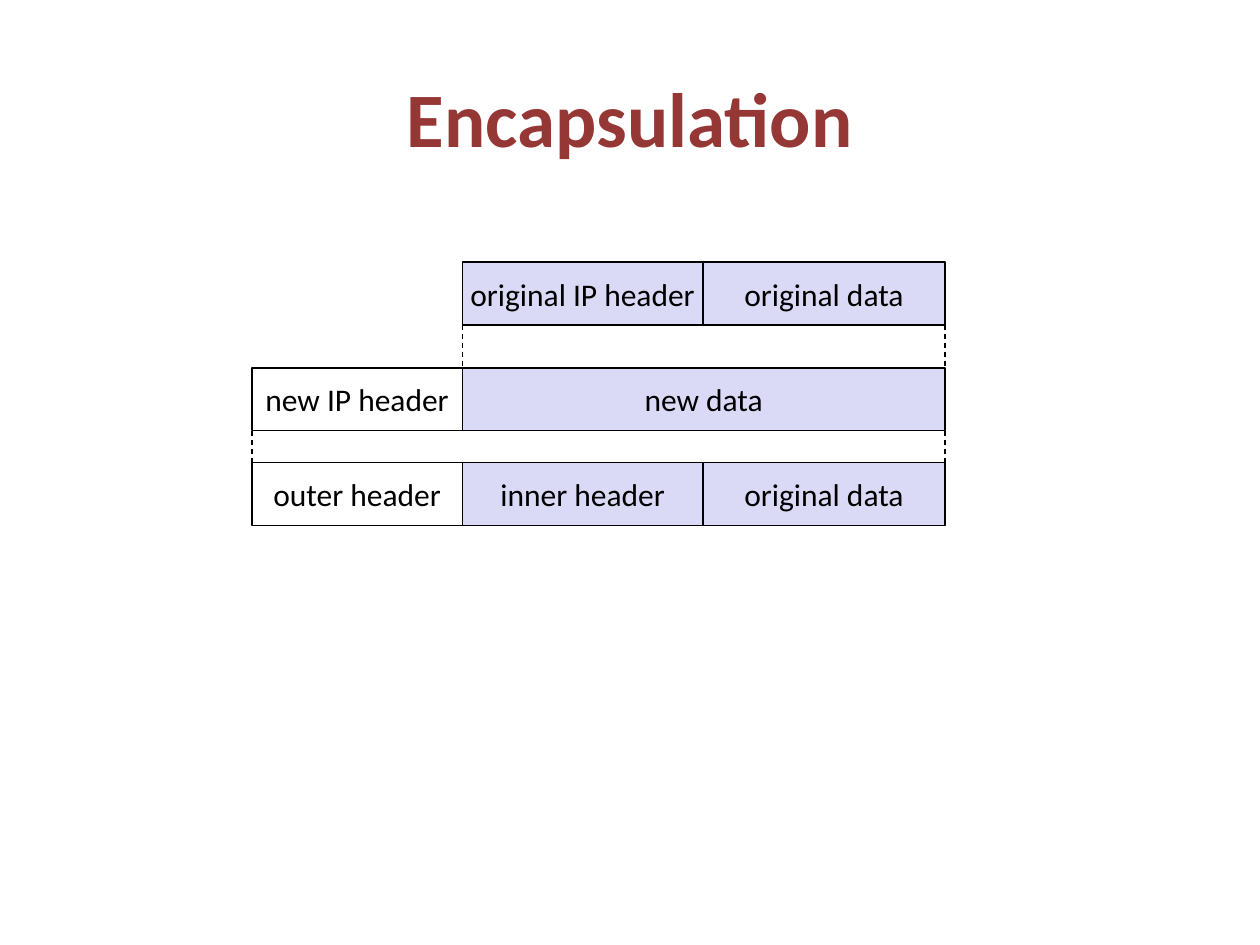
from typing import NamedTuple

from lxml import etree
from pptx import Presentation
from pptx.dml.color import RGBColor
from pptx.enum import dml, shapes, text
from pptx.oxml import ns
from pptx.util import Inches, Pt

FONT = "Calibri"
BLACK, WHITE, LILAC, DARK_RED = "000000", "FFFFFF", "DADAF6", "953735"

# Column edges shared by all packets, and the top of each packet row
OUTER, INNER, DATA, END = 2, 3.67, 5.58, 7.5
ORIGINAL_ROW, NEW_ROW, RESULT_ROW = 2.08, 2.92, 3.67
ROW_HEIGHT = 0.5
GUIDE_LENGTH = 0.33


class Field(NamedTuple):
    label: str
    left: float
    right: float
    top: float
    fill: str = LILAC


class Guide(NamedTuple):
    x: float
    row_top: float


FIELDS = [
    Field("original IP header", INNER, DATA, ORIGINAL_ROW),
    Field("original data", DATA, END, ORIGINAL_ROW),
    Field("new data", INNER, END, NEW_ROW),
    Field("new IP header", OUTER, INNER, NEW_ROW, WHITE),
    Field("outer header", OUTER, INNER, RESULT_ROW, WHITE),
    Field("inner header", INNER, DATA, RESULT_ROW),
    Field("original data", DATA, END, RESULT_ROW),
]

GUIDES = [
    Guide(INNER, ORIGINAL_ROW),
    Guide(END, ORIGINAL_ROW),
    Guide(OUTER, NEW_ROW),
    Guide(END, NEW_ROW),
]


def rgb(value: str) -> RGBColor:
    return RGBColor.from_string(value)


def style_text(frame, size: float, color: str, bold: bool = False) -> None:
    frame.vertical_anchor = text.MSO_ANCHOR.MIDDLE
    paragraph = frame.paragraphs[0]
    paragraph.alignment = text.PP_ALIGN.CENTER
    font = paragraph.font
    font.name, font.size, font.bold = FONT, Pt(size), bold
    font.color.rgb = rgb(color)


def style_line(line) -> None:
    line.color.rgb = rgb(BLACK)
    line.width = Pt(0.75)


def add_title(slide, wording: str) -> None:
    title = slide.shapes.title
    title.left, title.top = Inches(0.5), Inches(0.3)
    title.width, title.height = Inches(9), Inches(1.25)
    title.text_frame.text = wording
    style_text(title.text_frame, 44, DARK_RED, bold=True)


def add_field(slide, field: Field) -> None:
    box = slide.shapes.add_shape(
        shapes.MSO_SHAPE.RECTANGLE,
        Inches(field.left), Inches(field.top),
        Inches(field.right - field.left), Inches(ROW_HEIGHT),
    )
    box.shadow.inherit = False
    box.fill.solid()
    box.fill.fore_color.rgb = rgb(field.fill)
    style_line(box.line)
    box.text_frame.text = field.label
    box.text_frame.word_wrap = False
    style_text(box.text_frame, 18, BLACK)


def add_guide(slide, guide: Guide) -> None:
    """Draw a dashed line down from the bottom of a packet row."""
    start = guide.row_top + ROW_HEIGHT
    line = slide.shapes.add_connector(
        shapes.MSO_CONNECTOR.STRAIGHT,
        Inches(guide.x), Inches(start),
        Inches(guide.x), Inches(start + GUIDE_LENGTH),
    )
    style_line(line.line)
    line.line.dash_style = dml.MSO_LINE.DASH
    etree.SubElement(line._element.spPr, ns.qn("a:effectLst"))


def main() -> None:
    presentation = Presentation()
    presentation.slide_width, presentation.slide_height = Inches(10), Inches(7.5)
    slide = presentation.slides.add_slide(presentation.slide_layouts[5])
    add_title(slide, "Encapsulation")
    for field in FIELDS:
        add_field(slide, field)
    for guide in GUIDES:
        add_guide(slide, guide)
    presentation.save("out.pptx")


if __name__ == "__main__":
    main()
